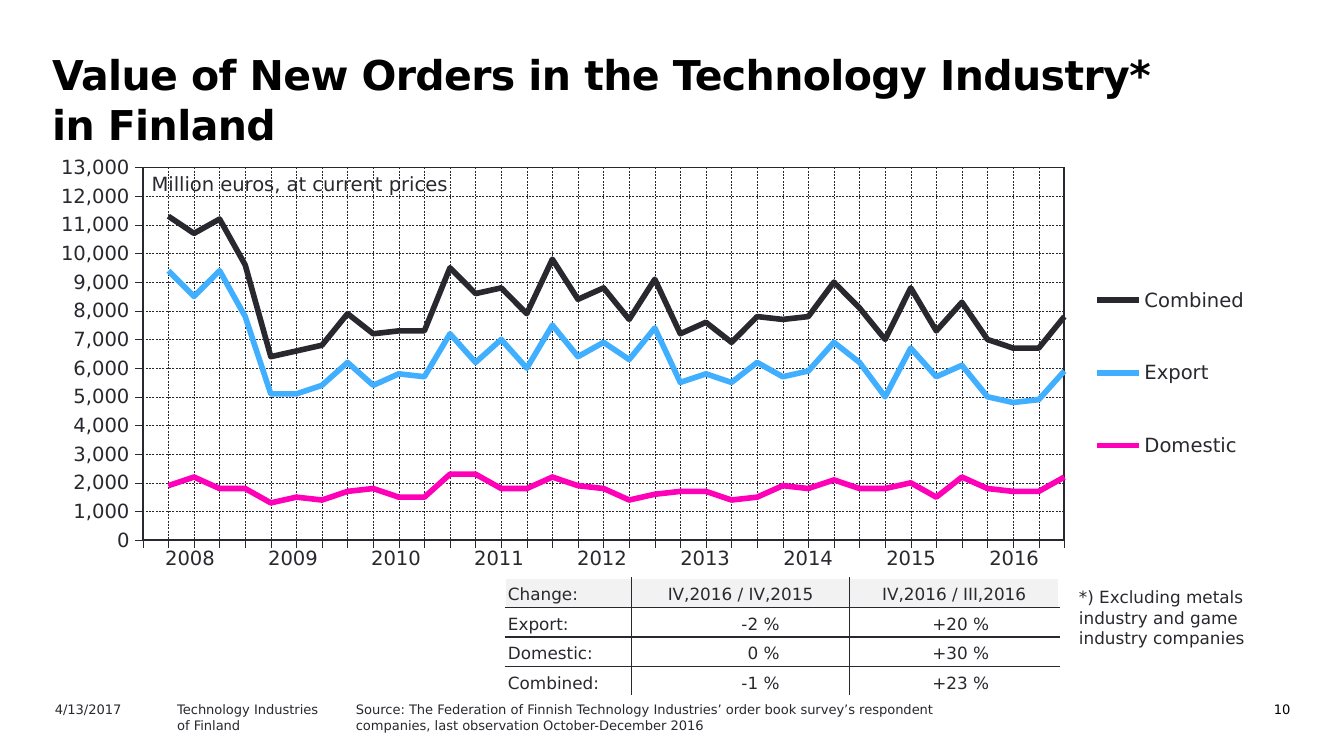
from dataclasses import dataclass

from lxml import etree
from pptx import Presentation
from pptx.chart.data import CategoryChartData
from pptx.dml.color import RGBColor
from pptx.enum.chart import XL_CHART_TYPE as ChartType
from pptx.enum.chart import XL_LEGEND_POSITION as LegendPosition
from pptx.enum.chart import XL_TICK_LABEL_POSITION as LabelPosition
from pptx.enum.chart import XL_TICK_MARK as TickMark
from pptx.enum.dml import MSO_LINE as LineStyle
from pptx.enum.text import MSO_ANCHOR as Anchor
from pptx.enum.text import PP_ALIGN as Align
from pptx.oxml import parse_xml
from pptx.oxml.ns import nsdecls, qn
from pptx.util import Inches, Pt

FONT = "DejaVu Sans"
INK, BLACK, WHITE, PALE = "29282E", "000000", "FFFFFF", "F2F2F2"
NO_STYLE = "{2D5ABB26-0587-4C30-8999-92F81FD0307C}"


@dataclass
class Label:
    lines: list[str]
    left: float
    top: float
    width: float
    height: float
    size: float = 7
    color: str = INK
    align: Align = Align.LEFT
    bold: bool = False
    wrap: bool = True


@dataclass
class Series:
    name: str
    color: str
    hundreds: list[int]  # quarterly values in hundreds of million euros


TITLE = Label(["Value of New Orders in the Technology Industry* in Finland"],
              0.29, 0.31, 8.73, 0.71, 22, BLACK, bold=True)
UNIT = Label(["Million euros, at current prices"], 1.03, 1.23, 2.44, 0.27, 10.5, wrap=False)
LABELS = [
    Label(["10"], 8.76, 5.17, 0.94, 0.18, color=BLACK, align=Align.RIGHT),
    Label(["Source: The Federation of Finnish Technology Industries’ order book survey’s "
           "respondent companies, last observation October-December 2016"],
          2.55, 5.17, 5.07, 0.18),
    Label(["*) Excluding metals industry and game industry companies"],
          7.93, 4.32, 1.66, 0.56, 9),
    Label(["Technology Industries", "of Finland"], 1.22, 5.17, 1.73, 0.18),
    Label(["4/13/2017"], 0.31, 5.17, 1, 0.18),
]
SERIES = [
    Series("Combined", INK, [
        113, 107, 112, 96, 64, 66, 68, 79, 72, 73, 73, 95, 86, 88, 79, 98, 84, 88,
        77, 91, 72, 76, 69, 78, 77, 78, 90, 81, 70, 88, 73, 83, 70, 67, 67, 78]),
    Series("Export", "40AFFF", [
        94, 85, 94, 78, 51, 51, 54, 62, 54, 58, 57, 72, 62, 70, 60, 75, 64, 69,
        63, 74, 55, 58, 55, 62, 57, 59, 69, 62, 50, 67, 57, 61, 50, 48, 49, 59]),
    Series("Domestic", "FF00B8", [
        19, 22, 18, 18, 13, 15, 14, 17, 18, 15, 15, 23, 23, 18, 18, 22, 19, 18,
        14, 16, 17, 17, 14, 15, 19, 18, 21, 18, 18, 20, 15, 22, 18, 17, 17, 22]),
]
YEARS = [str(year) for year in range(2008, 2017)]
CHANGES = [
    ["Change:", "IV,2016 / IV,2015", "IV,2016 / III,2016"],
    ["Export:", "-2 %", "+20 %"],
    ["Domestic:", "0 %", "+30 %"],
    ["Combined:", "-1 %", "+23 %"],
]


def rgb(color: str) -> RGBColor:
    return RGBColor.from_string(color)


def style_font(font, size: float, color: str = INK, bold: bool = False) -> None:
    font.name, font.size, font.bold = FONT, Pt(size), bold
    font.color.rgb = rgb(color)


def add_label(slide, label: Label):
    shape = slide.shapes.add_textbox(*map(Inches, (label.left, label.top, label.width, label.height)))
    frame = shape.text_frame
    frame.word_wrap = label.wrap
    frame.text = "\n".join(label.lines)
    for paragraph in frame.paragraphs:
        paragraph.alignment = label.align
        style_font(paragraph.font, label.size, label.color, label.bold)
    return shape


def style_line(line, width: float, color: str = INK, dash=None) -> None:
    line.color.rgb = rgb(color)
    line.width = Pt(width)
    if dash:
        line.dash_style = dash


def manual_layout(left: float, top: float, width: float, height: float, inner: bool = False):
    target = '<c:layoutTarget val="inner"/>' if inner else ""
    return parse_xml(
        f'<c:layout {nsdecls("c")}><c:manualLayout>{target}'
        '<c:xMode val="edge"/><c:yMode val="edge"/>'
        f'<c:x val="{left}"/><c:y val="{top}"/><c:w val="{width}"/><c:h val="{height}"/>'
        '</c:manualLayout></c:layout>')


def set_layout(element, layout, before: str | None = None) -> None:
    for old in element.findall(qn("c:layout")):
        element.remove(old)
    if before:
        element.find(qn(before)).addprevious(layout)
    else:
        element.insert(0, layout)


def add_orders_chart(slide) -> None:
    data = CategoryChartData(number_format="#,##0")
    data.categories = [str(number) for number in range(1, len(SERIES[0].hundreds) + 2)]
    for series in SERIES:
        data.add_series(series.name, [None] + [value * 100 for value in series.hundreds])
    chart = slide.shapes.add_chart(
        ChartType.LINE, *map(Inches, (0.31, 1.11, 9.18, 3.33)), data).chart
    style_font(chart.font, 10.5)
    chart.has_title = False

    plot = chart.plots[0]
    plot.vary_by_categories = False
    for line, series in zip(plot.series, SERIES):
        line.smooth = False
        style_line(line.format.line, 3, series.color)

    # Axes and grid
    for axis in (chart.category_axis, chart.value_axis):
        axis.has_major_gridlines = True
        style_line(axis.major_gridlines.format.line, 0.25, dash=LineStyle.DASH)
        style_line(axis.format.line, 0.22)
        axis.major_tick_mark, axis.minor_tick_mark = TickMark.OUTSIDE, TickMark.NONE
    chart.category_axis.tick_label_position = LabelPosition.NONE
    values = chart.value_axis
    values.minimum_scale, values.maximum_scale, values.major_unit = 0, 13000, 1000
    values.tick_labels.number_format = "#,##0"
    values.tick_labels.number_format_is_linked = False
    style_font(values.tick_labels.font, 10.5)

    # Points stand on the tick marks
    axis_element = values._element
    for old in axis_element.findall(qn("c:crossBetween")):
        axis_element.remove(old)
    axis_element.find(qn("c:crosses")).addnext(
        parse_xml(f'<c:crossBetween {nsdecls("c")} val="midCat"/>'))

    # Plot frame and legend
    area = chart._chartSpace.chart.plotArea
    set_layout(area, manual_layout(0.082, 0.041, 0.747, 0.833, inner=True))
    area.append(parse_xml(
        f'<c:spPr {nsdecls("c", "a")}><a:noFill/><a:ln w="12700"><a:solidFill>'
        f'<a:srgbClr val="{INK}"/></a:solidFill></a:ln></c:spPr>'))
    chart.has_legend = True
    chart.legend.position = LegendPosition.RIGHT
    chart.legend.include_in_layout = False
    style_font(chart.legend.font, 10.5)
    set_layout(chart.legend._element, manual_layout(0.84, 0.2, 0.15, 0.6), "c:overlay")


def add_plain_table(slide, left: float, top: float, widths: list[float], height: float, rows: int):
    table = slide.shapes.add_table(
        rows, len(widths), *map(Inches, (left, top, sum(widths), height * rows))).table
    table.first_row = table.horz_banding = False
    table._tbl.tblPr.find(qn("a:tableStyleId")).text = NO_STYLE
    for column, width in zip(table.columns, widths):
        column.width = Inches(width)
    for row in table.rows:
        row.height = Inches(height)
    return table


def write_cell(cell, text: str, size: float, align: Align) -> None:
    cell.text = text
    paragraph = cell.text_frame.paragraphs[0]
    paragraph.alignment = align
    style_font(paragraph.font, size)


def add_border(cell, side: str, color: str) -> None:
    line = etree.SubElement(cell._tc.get_or_add_tcPr(), qn(f"a:ln{side}"), w="12700")
    fill = etree.SubElement(line, qn("a:solidFill"))
    etree.SubElement(fill, qn("a:srgbClr"), val=color)


def add_year_row(slide) -> None:
    table = add_plain_table(slide, 1.03, 4.02, [6.9 / len(YEARS)] * len(YEARS), 0.31, 1)
    for cell, year in zip(table.rows[0].cells, YEARS):
        write_cell(cell, year, 10.5, Align.CENTER)
        cell.fill.background()


def add_change_table(slide) -> None:
    table = add_plain_table(slide, 3.76, 4.3, [0.94, 1.62, 1.56], 0.22, len(CHANGES))
    last_row, last_column = len(CHANGES) - 1, len(CHANGES[0]) - 1
    for i, texts in enumerate(CHANGES):
        for j, text in enumerate(texts):
            cell = table.cell(i, j)
            figure = i > 0 and j > 0
            align = Align.RIGHT if figure else Align.CENTER if j else Align.LEFT
            write_cell(cell, text, 9, align)
            cell.vertical_anchor = Anchor.BOTTOM
            cell.margin_left = cell.margin_top = cell.margin_bottom = Inches(0.02)
            cell.margin_right = Inches(0.52 if figure else 0.02)
            # Outer edges are white, inner rules dark
            outer = {"L": j == 0, "R": j == last_column, "T": i == 0, "B": i == last_row}
            for side, is_outer in outer.items():
                add_border(cell, side, WHITE if is_outer else INK)
            cell.fill.solid()
            cell.fill.fore_color.rgb = rgb(WHITE if i else PALE)


def main() -> None:
    presentation = Presentation()
    # Widescreen, 16:9
    presentation.slide_width, presentation.slide_height = Inches(10), Inches(10 * 9 / 16)
    slide = presentation.slides.add_slide(presentation.slide_layouts[6])

    # Title with fixed line spacing and slightly tight letters
    paragraph = add_label(slide, TITLE).text_frame.paragraphs[0]
    paragraph.line_spacing = Pt(27)
    paragraph.runs[0].font._element.set("spc", "-30")

    # Chart, years and changes
    add_orders_chart(slide)
    add_year_row(slide)
    add_label(slide, UNIT)
    add_change_table(slide)

    # Footnote and footer
    for label in LABELS:
        add_label(slide, label)
    presentation.save("out.pptx")


if __name__ == "__main__":
    main()
